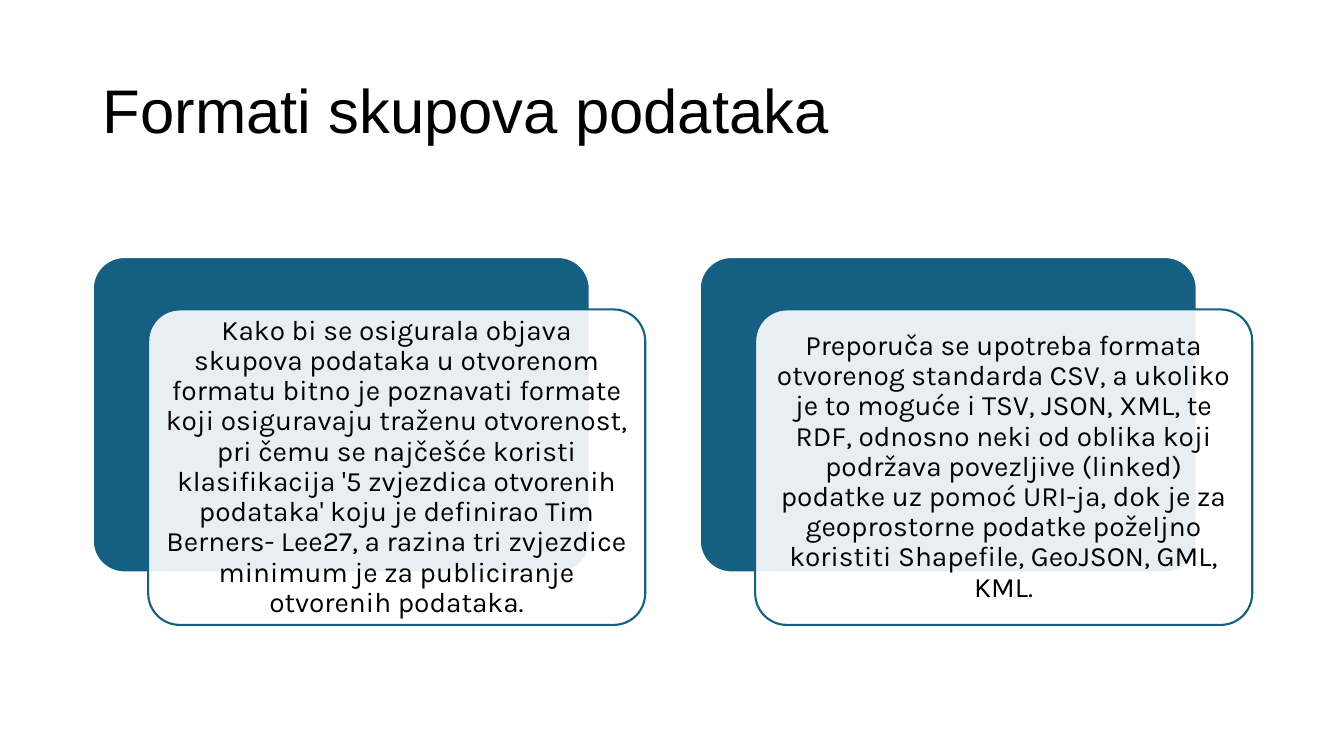
from lxml import etree
from pptx import Presentation
from pptx import util as u
from pptx.dml.color import RGBColor
from pptx.enum import shapes, text
from pptx.oxml.ns import qn


def color(value):
    return RGBColor.from_string(value)


def write(frame, words, font, size, align):
    frame.text = words
    frame.word_wrap = True
    frame.auto_size = text.MSO_AUTO_SIZE.NONE
    frame.vertical_anchor = text.MSO_ANCHOR.MIDDLE
    para = frame.paragraphs[0]
    para.alignment = align
    para.line_spacing = 0.9
    span = para.runs[0]
    span.font.name = font
    span.font.size = u.Pt(size)
    span.font.color.rgb = color("000000")


BLUE = "156082"
WHITE = "FFFFFF"
CARD_WIDTH, CARD_HEIGHT = 4.93, 3.13
CARD_LEFT, CARD_TOP, CARD_STEP = 0.92, 2.55, 6.02
SHIFT_X, SHIFT_Y = 0.55, 0.52

messages = [
    "Kako bi se osigurala objava skupova podataka u otvorenom formatu bitno je "
    "poznavati formate koji osiguravaju traženu otvorenost, pri čemu se najčešće "
    "koristi klasifikacija '5 zvjezdica otvorenih podataka' koju je definirao "
    "Tim Berners- Lee27, a razina tri zvjezdice minimum je za publiciranje "
    "otvorenih podataka.",
    "Preporuča se upotreba formata otvorenog standarda CSV, a ukoliko je to moguće "
    "i TSV, JSON, XML, te RDF, odnosno neki od oblika koji podržava povezljive "
    "(linked) podatke uz pomoć URI-ja, dok je za geoprostorne podatke poželjno "
    "koristiti Shapefile, GeoJSON, GML, KML.",
]

deck = Presentation()
deck.slide_width = u.Inches(13.33)
deck.slide_height = u.Inches(7.5)
page = deck.slides.add_slide(deck.slide_layouts[5])

title = page.shapes.title
title.left, title.top = u.Inches(0.92), u.Inches(0.4)
title.width, title.height = u.Inches(11.5), u.Inches(1.45)
write(title.text_frame, "Formati skupova podataka", "Arial", 44, text.PP_ALIGN.LEFT)

for index, message in enumerate(messages):
    left = CARD_LEFT + index * CARD_STEP
    layers = [
        (left, CARD_TOP, BLUE, WHITE),
        (left + SHIFT_X, CARD_TOP + SHIFT_Y, WHITE, BLUE),
    ]
    for x, y, fill, line in layers:
        card = page.shapes.add_shape(
            shapes.MSO_SHAPE.ROUNDED_RECTANGLE,
            u.Inches(x), u.Inches(y), u.Inches(CARD_WIDTH), u.Inches(CARD_HEIGHT),
        )
        card.adjustments[0] = 0.1
        card.shadow.inherit = False
        card.fill.solid()
        card.fill.fore_color.rgb = color(fill)
        card.line.color.rgb = color(line)
        card.line.width = u.Pt(1.5)

    tint = card.fill._xPr.find(qn("a:solidFill"))[0]
    etree.SubElement(tint, qn("a:alpha")).set("val", "90000")
    frame = card.text_frame
    frame.margin_left = frame.margin_right = u.Inches(0.08)
    frame.margin_top = frame.margin_bottom = u.Inches(0.08)
    write(frame, message, "Karla", 20, text.PP_ALIGN.CENTER)

deck.save("out.pptx")
